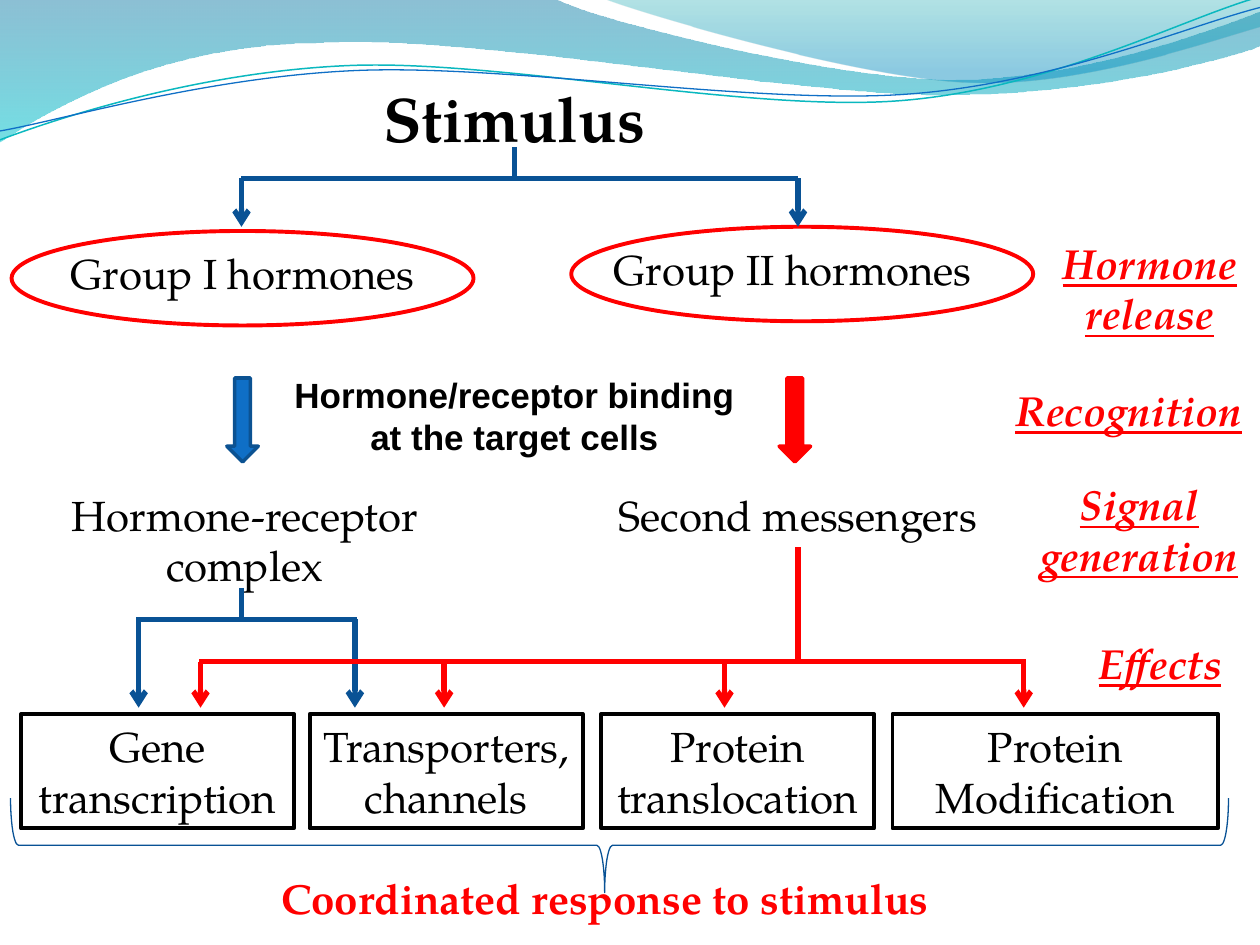
import math

from lxml import etree
from pptx import Presentation
from pptx import util as u
from pptx.dml.color import RGBColor
from pptx.enum import shapes, text
from pptx.oxml.ns import qn

COLOURS = {
    "ink": "000000", "red": "FF0000", "blue": "095295", "arrow": "0F6FC6",
    "arrow edge": "0B5292", "deep": "0074A1", "aqua": "00C6CF",
    "teal": "00A1A9", "sky": "008BBF", "wave teal": "0AB8BF",
}
SERIF, SANS = "TeX Gyre Pagella", "Arial"
COLUMNS, ROWS = 120, 90
CELL = u.Inches(10) // COLUMNS
TENTH = COLUMNS / 10
WAVE_TILT = -2.7

BAND = [
    [(0, -0.01)], [(4.4, -0.01)],
    [(4.76, 0.17), (6.64, 0.63), (7.58, 0.63)], [(8.53, 0.63), (9.58, 0.26), (10, 0.09)],
    [(10.01, 0.36)],
    [(9.83, 0.44), (8.7, 0.76), (7.46, 0.75)], [(6.22, 0.75), (3.82, 0.28), (2.57, 0.34)],
    [(1.29, 0.35), (0.46, 0.83), (-0.01, 1.13)], [(0, -0.01)],
]
CREST = [
    [(4.79, -0.01)], [(5.09, 0.11), (6.82, 0.62), (7.69, 0.65)],
    [(8.56, 0.69), (9.61, 0.32), (10, 0.21)], [(10, 0)], [(4.79, -0.01)],
]
TEAL_WAVE = [
    [(0, 1.11)], [(0.48, 0.93), (1.58, 0.57), (2.77, 0.52)],
    [(3.95, 0.47), (5.93, 0.89), (7.13, 0.8)], [(8.33, 0.71), (9.38, 0.15), (9.98, -0.02)],
]
BLUE_WAVE = [
    [(0, 1.04)], [(0.47, 0.96), (1.64, 0.61), (2.83, 0.56)],
    [(4.03, 0.51), (5.97, 0.83), (7.17, 0.75)], [(8.36, 0.67), (9.41, 0.21), (10, 0.06)],
]


def grid(*cells):
    """Turn grid columns or rows into lengths."""
    return [u.Emu(round(cell * CELL)) for cell in cells]


def rgb(name):
    """Look up a colour by name."""
    return RGBColor.from_string(COLOURS[name])


def set_line(item, colour, width):
    """Colour an outline and set its width in points."""
    item.line.color.rgb = rgb(colour)
    item.line.width = u.Pt(width)


def turn(point, centre, degrees):
    """Turn a point clockwise about a centre."""
    angle = math.radians(degrees)
    x, y = point[0] - centre[0], point[1] - centre[1]
    return (centre[0] + x * math.cos(angle) - y * math.sin(angle),
            centre[1] + x * math.sin(angle) + y * math.cos(angle))


def add_outline(slide, segments, close):
    """Draw lines and Bezier curves given in tenths of the slide width."""
    points = [grid(x * TENTH, y * TENTH) for segment in segments for x, y in segment]
    builder = slide.shapes.build_freeform(*points[0], scale=1.0)
    builder.add_line_segments(points[1:], close=close)
    outline = builder.convert_to_shape()
    outline.shadow.inherit = False
    sides = iter(list(outline._element.spPr.iter(qn("a:lnTo"))))
    for segment in segments[1:]:
        knots = [next(sides) for _ in segment]
        if len(knots) == 3:
            curve = etree.Element(qn("a:cubicBezTo"))
            knots[0].addprevious(curve)
            for knot in knots:
                curve.append(knot[0])
                knot.getparent().remove(knot)
    return outline


def add_swash(slide, segments, stops):
    """Draw a wave filled with a translucent vertical gradient."""
    swash = add_outline(slide, segments, True)
    swash.line.fill.background()
    swash.fill.gradient()
    swash.fill.gradient_angle = 270
    for stop, (position, colour, _) in zip(swash.fill.gradient_stops, stops):
        stop.position = position
        stop.color.rgb = rgb(colour)
    tints = swash._element.spPr.iter(qn("a:srgbClr"))
    for tint, (_, _, opacity) in zip(tints, stops):
        etree.SubElement(tint, qn("a:alpha"), val=str(opacity * 1000))


def add_wave(slide, segments, centre, colour, width):
    """Draw a tilted, unfilled wave line."""
    level = [[turn(point, centre, -WAVE_TILT) for point in segment] for segment in segments]
    wave = add_outline(slide, level, False)
    wave.rotation = WAVE_TILT
    wave.fill.background()
    set_line(wave, colour, width)


def write(frame, lines, size=24, colour="ink", face=SERIF, bold=False, slanted=False, wrap=True):
    """Write centred lines, one paragraph each."""
    frame.word_wrap = wrap
    frame.auto_size = text.MSO_AUTO_SIZE.SHAPE_TO_FIT_TEXT
    for index, line in enumerate(lines):
        paragraph = frame.add_paragraph() if index else frame.paragraphs[0]
        paragraph.alignment = text.PP_ALIGN.CENTER
        run = paragraph.add_run()
        run.text = line
        font = run.font
        font.size, font.name, font.color.rgb = u.Pt(size), face, rgb(colour)
        font.bold, font.italic, font.underline = bold, slanted, slanted


def add_label(slide, area, *lines, **style):
    """Add a text box on the grid."""
    label = slide.shapes.add_textbox(*grid(*area))
    write(label.text_frame, lines, **style)
    return label


def add_figure(slide, preset, area, colour, width, fill=None):
    """Add an outlined preset shape on the grid."""
    figure = slide.shapes.add_shape(preset, *grid(*area))
    figure.shadow.inherit = False
    if fill:
        figure.fill.solid()
        figure.fill.fore_color.rgb = rgb(fill)
    else:
        figure.fill.background()
    set_line(figure, colour, width)
    return figure


def add_path(slide, ends, colour, arrow=False):
    """Add a straight connector, with an arrowhead if wanted."""
    path = slide.shapes.add_connector(shapes.MSO_CONNECTOR.STRAIGHT, *grid(*ends))
    set_line(path, colour, 3)
    if arrow:
        etree.SubElement(path.line._get_or_add_ln(), qn("a:tailEnd"), type="arrow")
    etree.SubElement(path._element.spPr, qn("a:effectLst"))
    return path


def add_branches(slide, colour, bar, drops, tip, stem):
    """Add a bar with arrows dropping from it and a stem rising to its source."""
    left, right, level = bar
    add_path(slide, (left, level, right, level), colour)
    for column in drops:
        add_path(slide, (column, level, column, tip), colour, arrow=True)
    column, top = stem
    return add_path(slide, (column, top, column, level), colour)


def add_background(slide):
    """Draw the waves along the top."""
    add_swash(slide, BAND, [(0, "deep", 45), (1, "aqua", 55)])
    add_swash(slide, CREST, [(0, "teal", 30), (0.8, "sky", 45)])
    add_wave(slide, TEAL_WAVE, (4.99, 0.58), "wave teal", 0.85)
    add_wave(slide, BLUE_WAVE, (5, 0.59), "arrow", 0.75)


def add_effects(slide):
    """Add the row of effect boxes and the brace that gathers them."""
    effects = [(2, 26, "Gene transcription"), (29.5, 26, "Transporters, channels"),
               (57.25, 26, "Protein translocation"), (85, 31, "Protein Modification")]
    for left, width, effect in effects:
        box = add_figure(slide, shapes.MSO_SHAPE.RECTANGLE, (left, 68, width, 10.9), "ink", 2.25)
        write(box.text_frame, [effect])
    brace = add_figure(slide, shapes.MSO_SHAPE.RIGHT_BRACE, (54.5, 22.5, 9, 116), "blue", 0.75)
    brace.rotation = 90
    brace.adjustments[0], brace.adjustments[1] = 1 / 12, 21 / 41
    add_label(slide, (18.6, 82.5, 78, 6.1), "Coordinated response to stimulus",
              colour="red", bold=True)


def main():
    """Build the hormone signalling slide."""
    deck = Presentation()
    deck.slide_width, deck.slide_height = grid(COLUMNS, ROWS)
    slide = deck.slides.add_slide(deck.slide_layouts[6])
    add_background(slide)
    add_label(slide, (17, 7, 64, 8.5), "Stimulus", size=36, bold=True)
    add_label(slide, (2.1, 23, 42, 6.1), "Group I hormones")
    add_label(slide, (57, 22.6, 37, 6.1), "Group II hormones")
    for left, top in ((1.1, 22), (54.4, 21.6)):
        add_figure(slide, shapes.MSO_SHAPE.OVAL, (left, top, 44, 9), "red", 2.25)
    for left, edge, fill in ((21.6, "arrow edge", "arrow"), (74.2, "red", "red")):
        add_figure(slide, shapes.MSO_SHAPE.DOWN_ARROW, (left, 36, 3, 8), edge, 2, fill)
    add_label(slide, (26.7, 35, 44.6, 9.2), "Hormone/receptor binding", "at the target cells",
              wrap=False, size=20, face=SANS, bold=True)
    add_label(slide, (0.3, 46, 46, 10.9), "Hormone-receptor complex")
    messengers = add_label(slide, (53, 46, 46, 6.1), "Second messengers")
    add_effects(slide)
    add_branches(slide, "blue", (23, 76, 17), (23, 76), 21.6, (49, 14))
    add_branches(slide, "blue", (13, 34, 59), (13.2, 33.8), 67.4, (23, 56))
    trunk = add_branches(slide, "red", (19, 97.7, 63), (19.1, 42.3, 69, 97.5), 67.4, (76, 52.1))
    trunk.begin_connect(messengers, 2)
    stages = [(95, 22, 10.9, "Hormone release"), (93, 36, 6, "Recognition"),
              (94, 45, 10.9, "Signal generation"), (96, 60.1, 6, "Effects")]
    for left, top, height, stage in stages:
        add_label(slide, (left, top, 29, height), stage, colour="red", bold=True, slanted=True)
    deck.save("out.pptx")


if __name__ == "__main__":
    main()
